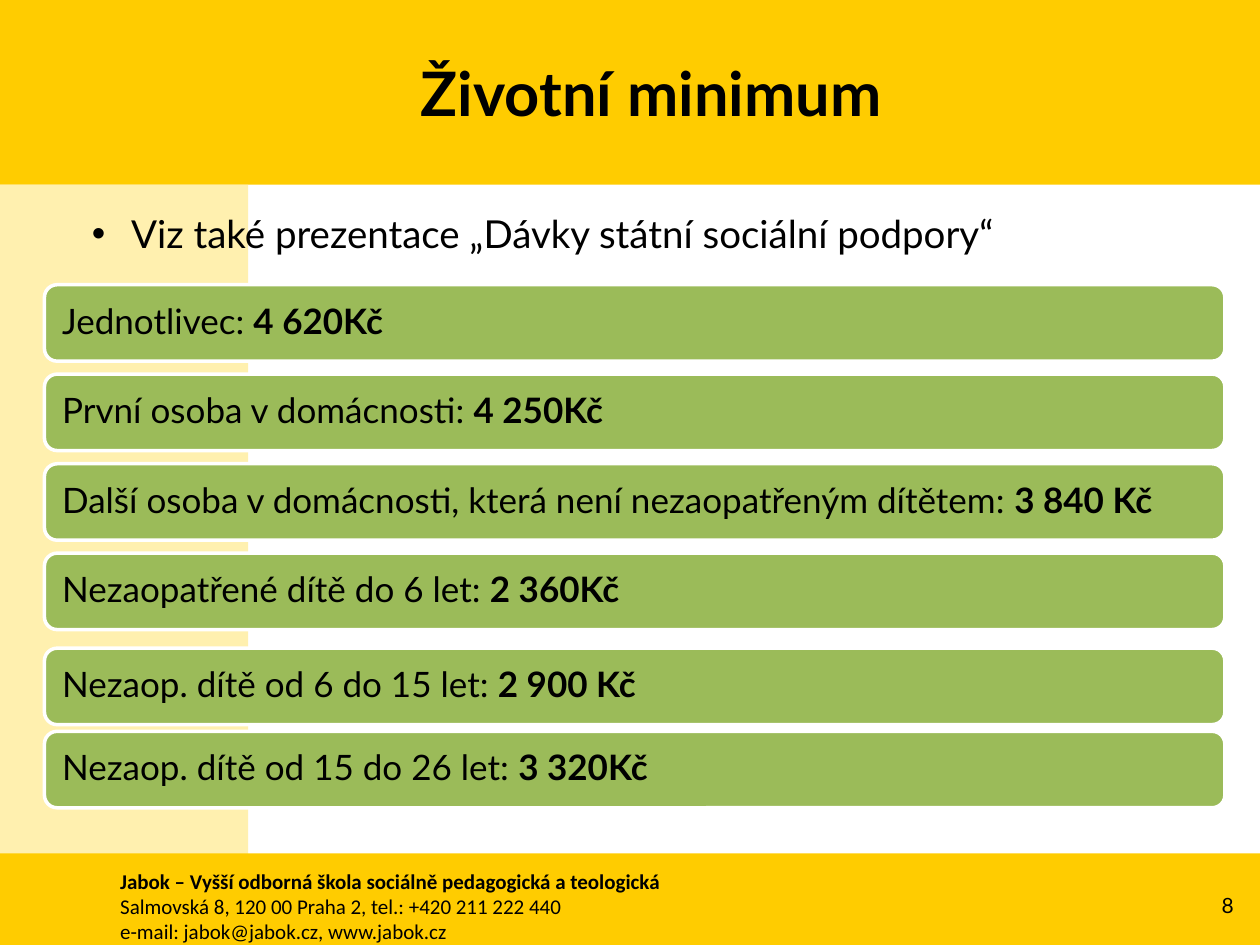
from dataclasses import dataclass

from lxml.etree import SubElement
from pptx import Presentation
from pptx.dml.color import RGBColor
from pptx.enum.shapes import MSO_SHAPE as Shape
from pptx.enum.text import MSO_ANCHOR as Anchor, MSO_AUTO_SIZE as AutoSize, PP_ALIGN as Align
from pptx.oxml.ns import qn
from pptx.util import Pt


@dataclass(frozen=True)
class Theme:
    gold: str = "FFCC00"
    cream: str = "FFF0AF"
    green: str = "9BBB59"
    white: str = "FFFFFF"
    ink: str = "000000"
    font: str = "Lato"
    footer_font: str = "Calibri"
    title_size: float = 35
    bullet_size: float = 22
    bar_size: float = 20
    small_size: float = 12


class SlideBuilder:
    def __init__(self, page, theme):
        self.page = page
        self.theme = theme

    def style(self, span, size, bold=False, font=None):
        span.font.size = Pt(size)
        span.font.bold = bold
        span.font.name = font or self.theme.font
        span.font.color.rgb = RGBColor.from_string(self.theme.ink)

    def shape(self, kind, left, top, width, height, fill, line=None):
        box = self.page.shapes.add_shape(kind, Pt(left), Pt(top), Pt(width), Pt(height))
        box.shadow.inherit = False
        box.fill.solid()
        box.fill.fore_color.rgb = RGBColor.from_string(fill)
        if line:
            box.line.color.rgb = RGBColor.from_string(line)
            box.line.width = Pt(2)
        else:
            box.line.fill.background()
        return box

    def band(self, left, top, width, height, fill):
        self.shape(Shape.RECTANGLE, left, top, width, height, fill)

    def bar(self, left, top, width, height, label, amount):
        box = self.shape(Shape.ROUNDED_RECTANGLE, left, top, width, height,
                         self.theme.green, self.theme.white)
        frame = box.text_frame
        frame.word_wrap = True
        frame.vertical_anchor = Anchor.MIDDLE
        frame.margin_left = frame.margin_right = Pt(8)
        frame.margin_top = frame.margin_bottom = Pt(6)
        para = frame.paragraphs[0]
        para.alignment = Align.LEFT
        para.line_spacing = 0.9
        for text, bold in ((label + ": ", False), (amount, True)):
            span = para.add_run()
            span.text = text
            self.style(span, self.theme.bar_size, bold)

    def title(self, text, left, top, width, height):
        box = self.page.shapes.title
        box.left, box.top, box.width, box.height = Pt(left), Pt(top), Pt(width), Pt(height)
        frame = box.text_frame
        frame.text = text
        frame.auto_size = AutoSize.NONE
        frame.vertical_anchor = Anchor.MIDDLE
        frame.paragraphs[0].alignment = Align.CENTER
        self.style(frame.paragraphs[0].runs[0], self.theme.title_size, bold=True)
        # Bring the title in front of the bands
        self.page.shapes._spTree.append(box._element)

    def text(self, lines, left, top, width, height, size, font=None,
             bold_first=False, align=Align.LEFT, anchor=Anchor.TOP):
        box = self.page.shapes.add_textbox(Pt(left), Pt(top), Pt(width), Pt(height))
        frame = box.text_frame
        frame.word_wrap = True
        frame.vertical_anchor = anchor
        frame.text = "\n".join(lines)
        for index, para in enumerate(frame.paragraphs):
            para.alignment = align
            self.style(para.runs[0], size, bold_first and index == 0, font)
        return box

    def bullet(self, text, left, top, width, height):
        box = self.text([text], left, top, width, height, self.theme.bullet_size)
        properties = box.text_frame.paragraphs[0]._p.get_or_add_pPr()
        properties.set("marL", str(Pt(22.5)))
        properties.set("indent", str(Pt(-22.5)))
        SubElement(properties, qn("a:buFont")).set("typeface", "Arial")
        SubElement(properties, qn("a:buChar")).set("char", "•")


AMOUNTS = [  # top, label, amount
    (162.7, "Jednotlivec", "4 620Kč"),
    (213.8, "První osoba v domácnosti", "4 250Kč"),
    (265, "Další osoba v domácnosti, která není nezaopatřeným dítětem", "3 840 Kč"),
    (316.1, "Nezaopatřené dítě do 6 let", "2 360Kč"),
    (370.4, "Nezaop. dítě od 6 do 15 let", "2 900 Kč"),
    (417.9, "Nezaop. dítě od 15 do 26 let", "3 320Kč"),
]
FOOTER = [
    "Jabok – Vyšší odborná škola sociálně pedagogická a teologická",
    "Salmovská 8, 120 00 Praha 2, tel.: +420 211 222 440",
    "e-mail: jabok@jabok.cz, www.jabok.cz",
]


def main():
    deck = Presentation()
    deck.slide_width, deck.slide_height = Pt(720), Pt(540)
    theme = Theme()
    builder = SlideBuilder(deck.slides.add_slide(deck.slide_layouts[5]), theme)

    # Background bands
    builder.band(0, 0, 720, 105.6, theme.gold)
    builder.band(0, 105.6, 141.8, 434.4, theme.cream)
    builder.band(0, 487.6, 720, 52.4, theme.gold)

    # Footer and page number
    builder.text(FOOTER, 61.6, 492.5, 590, 51, theme.small_size,
                 theme.footer_font, bold_first=True)
    builder.text(["8"], 666.7, 502.6, 45.4, 28.8, theme.small_size,
                 align=Align.RIGHT, anchor=Anchor.MIDDLE)

    # Amount bars
    for top, label, amount in AMOUNTS:
        builder.bar(25.4, top, 674.6, 43.7, label, amount)

    # Title and reference
    builder.title("Životní minimum", 36.7, 26, 671, 53.3)
    builder.bullet("Viz také prezentace „Dávky státní sociální podpory“",
                   45.4, 116.6, 623.5, 33.8)

    deck.save("out.pptx")


if __name__ == "__main__":
    main()
